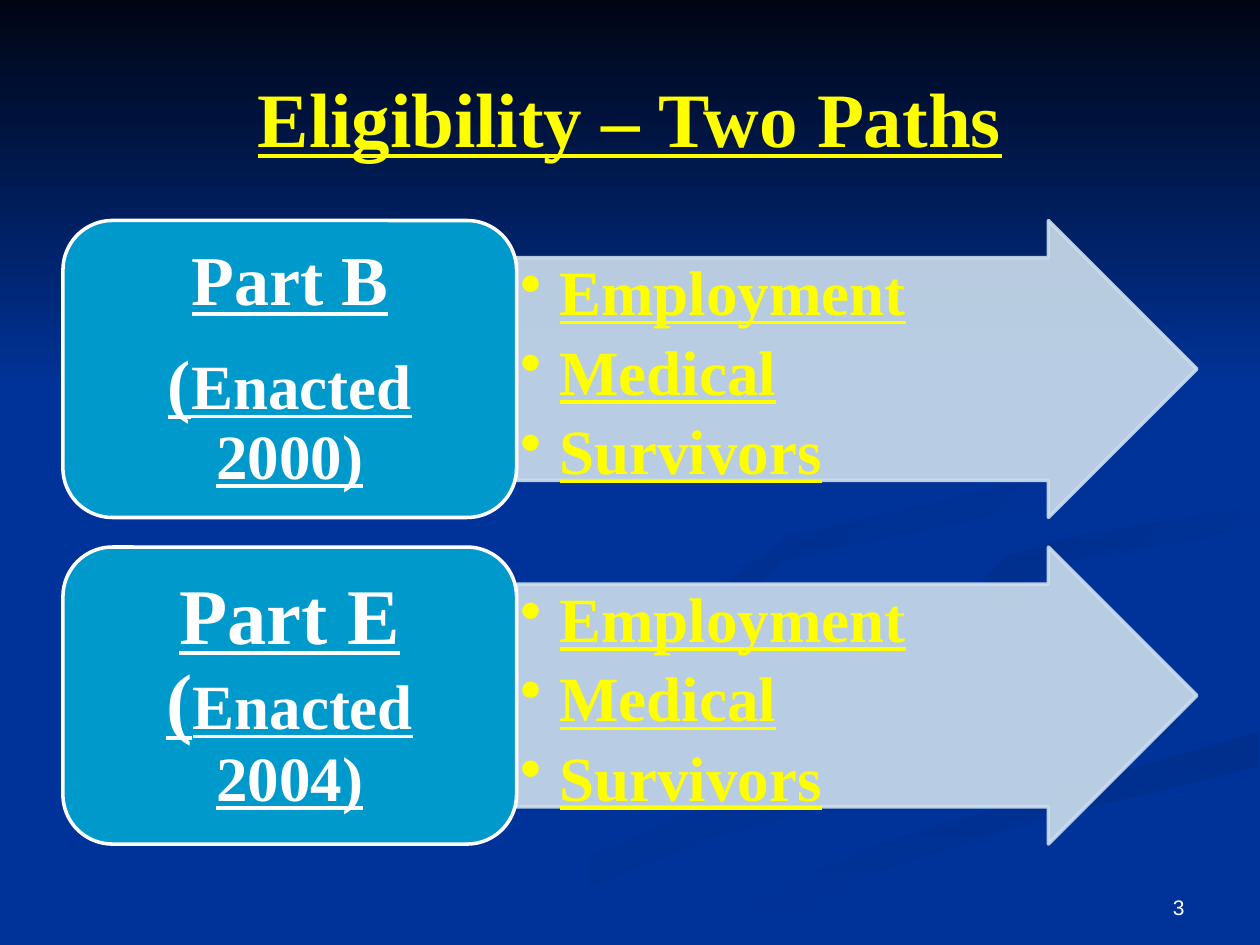
import pptx
import pptx.util
import pptx.dml.color
import pptx.enum.shapes
import pptx.enum.text
import pptx.oxml.ns
import lxml.etree

Pt = pptx.util.Pt
RGBColor = pptx.dml.color.RGBColor
MSO_SHAPE = pptx.enum.shapes.MSO_SHAPE
ALIGN = pptx.enum.text.PP_ALIGN
ANCHOR = pptx.enum.text.MSO_ANCHOR
qn = pptx.oxml.ns.qn

NAVY = RGBColor(0x00, 0x33, 0x99)
NIGHT = RGBColor(0x00, 0x05, 0x14)
DIM = RGBColor(0x00, 0x31, 0x93)
DARK = RGBColor(0x00, 0x2F, 0x8D)
CYAN = RGBColor(0x00, 0x99, 0xCC)
PALE = RGBColor(0xCC, 0xDE, 0xEC)
WHITE = RGBColor(0xFF, 0xFF, 0xFF)
YELLOW = RGBColor(0xFF, 0xFF, 0x00)

prs = pptx.Presentation()
prs.slide_width, prs.slide_height = Pt(720), Pt(540)
s = prs.slides.add_slide(prs.slide_layouts[6])
s.background.fill.solid()
s.background.fill.fore_color.rgb = NAVY


def add_text(text, x, y, w, h, size=36, color=WHITE, font="Times New Roman", strong=True,
             align=ALIGN.CENTER, anchor=ANCHOR.MIDDLE, inset=(7.2, 3.6),
             line=1.0, after=0, indent=0):
    tf = s.shapes.add_textbox(Pt(x), Pt(y), Pt(w), Pt(h)).text_frame
    tf.word_wrap = True
    tf.vertical_anchor = anchor
    tf.margin_left = tf.margin_right = Pt(inset[0])
    tf.margin_top = tf.margin_bottom = Pt(inset[1])
    for i, runs in enumerate(text):
        p = tf.paragraphs[0] if i == 0 else tf.add_paragraph()
        p.alignment, p.line_spacing, p.space_after = align, line, Pt(after)
        if indent:
            pPr = p._p.get_or_add_pPr()
            pPr.set("marL", str(Pt(indent)))
            pPr.set("indent", str(-Pt(indent)))
            lxml.etree.SubElement(pPr, qn("a:buChar")).set("char", "•")
        for words, run_size in runs:
            r = p.add_run()
            r.text = words
            r.font.name, r.font.size = font, Pt(run_size or size)
            r.font.bold = r.font.underline = strong
            r.font.color.rgb = color


def paint(sp, colors, angle=0, line=None, alpha=None):
    sp.shadow.inherit = False
    if len(colors) == 1:
        sp.fill.solid()
        sp.fill.fore_color.rgb = colors[0]
    else:
        sp.fill.gradient()
        sp.fill.gradient_angle = -angle % 360
        for stop, color, position in zip(sp.fill.gradient_stops, colors, (0, 1)):
            stop.color.rgb, stop.position = color, position
    if line is None:
        sp.line.fill.background()
    else:
        sp.line.color.rgb, sp.line.width = line, Pt(2)
    if alpha:
        for clr in sp._element.spPr.iter(qn("a:srgbClr")):
            lxml.etree.SubElement(clr, qn("a:alpha")).set("val", str(alpha * 1000))


SWIRLS = [
    ((NAVY, DIM), 0, [
        (562, 398), (491, 374), (428, 349), (414, 330), (412, 343), (489, 374), (559, 398),
        (564, 413), (514, 436), (388, 467), (216, 539), (260, 539), (406, 479), (544, 442),
        (576, 418)]),
    ((NAVY, DIM), 45, [
        (679, 410), (639, 385), (536, 353), (521, 334), (552, 369), (642, 398), (661, 418),
        (644, 436)]),
    ((DARK, NAVY), 90, [
        (362, 539), (411, 539), (500, 498), (591, 469), (719, 438), (719, 418), (574, 459),
        (454, 499)]),
    ((NAVY,), 0, [
        (522, 334), (558, 362), (662, 394), (678, 417), (607, 445), (446, 492), (343, 539),
        (374, 538), (501, 482), (719, 418), (719, 387), (599, 359), (562, 333), (612, 307),
        (719, 289), (719, 279), (554, 307)]),
    ((DARK, NAVY), 45, [
        (562, 331), (570, 344), (595, 357), (580, 340), (618, 319), (719, 302), (719, 289),
        (611, 307), (575, 318)]),
    ((DARK, NAVY), 45, [
        (492, 310), (594, 289), (640, 261), (641, 233), (607, 198), (549, 168), (616, 205),
        (639, 240), (613, 269), (450, 307), (415, 333), (448, 360), (427, 338), (449, 320)]),
    ((NIGHT, NAVY), 90, [(0, 0), (0, 222), (720, 222), (720, 0)]),
]
for colors, angle, points in SWIRLS:
    fb = s.shapes.build_freeform(*points[0], scale=Pt(1))
    fb.add_line_segments(points[1:], close=True)
    paint(fb.convert_to_shape(), colors, angle)

add_text([[("Eligibility – Two Paths", 44)]], 36, 21.6, 648, 90, color=YELLOW)

PATHS = [
    ([[("Part B", 40)], [("(", 40), ("Enacted 2000)", 36)]], (12.2, 5.8)),
    ([[("Part E (", 45), ("Enacted 2004)", 36)]], (13.7, 6.5)),
]
CRITERIA = [[(word, 36)] for word in ("Employment", "Medical", "Survivors")]
for i, (label, inset) in enumerate(PATHS):
    top = 126 + i * 186.6
    sp = s.shapes.add_shape(MSO_SHAPE.RIGHT_ARROW, Pt(295.2), Pt(top), Pt(388.8), Pt(169.7))
    sp.adjustments[0], sp.adjustments[1] = 0.75, 0.5
    paint(sp, (PALE,), line=PALE, alpha=90)
    add_text(CRITERIA, 295.2, top + 21.3, 325.4, 127.4, color=YELLOW, align=ALIGN.LEFT,
             anchor=ANCHOR.TOP, inset=(2, 2), line=0.9, after=6.5, indent=22.5)
    sp = s.shapes.add_shape(MSO_SHAPE.ROUNDED_RECTANGLE, Pt(36), Pt(top), Pt(259.2), Pt(169.7))
    paint(sp, (CYAN,), line=WHITE)
    add_text(label, 44.3, top + 8.3, 242.6, 153.2, inset=inset, line=0.9, after=16)

add_text([[("3", 12)]], 516.2, 491.8, 167.8, 37.4, font="Arial", strong=False,
         align=ALIGN.RIGHT, anchor=ANCHOR.BOTTOM)

prs.save("out.pptx")
